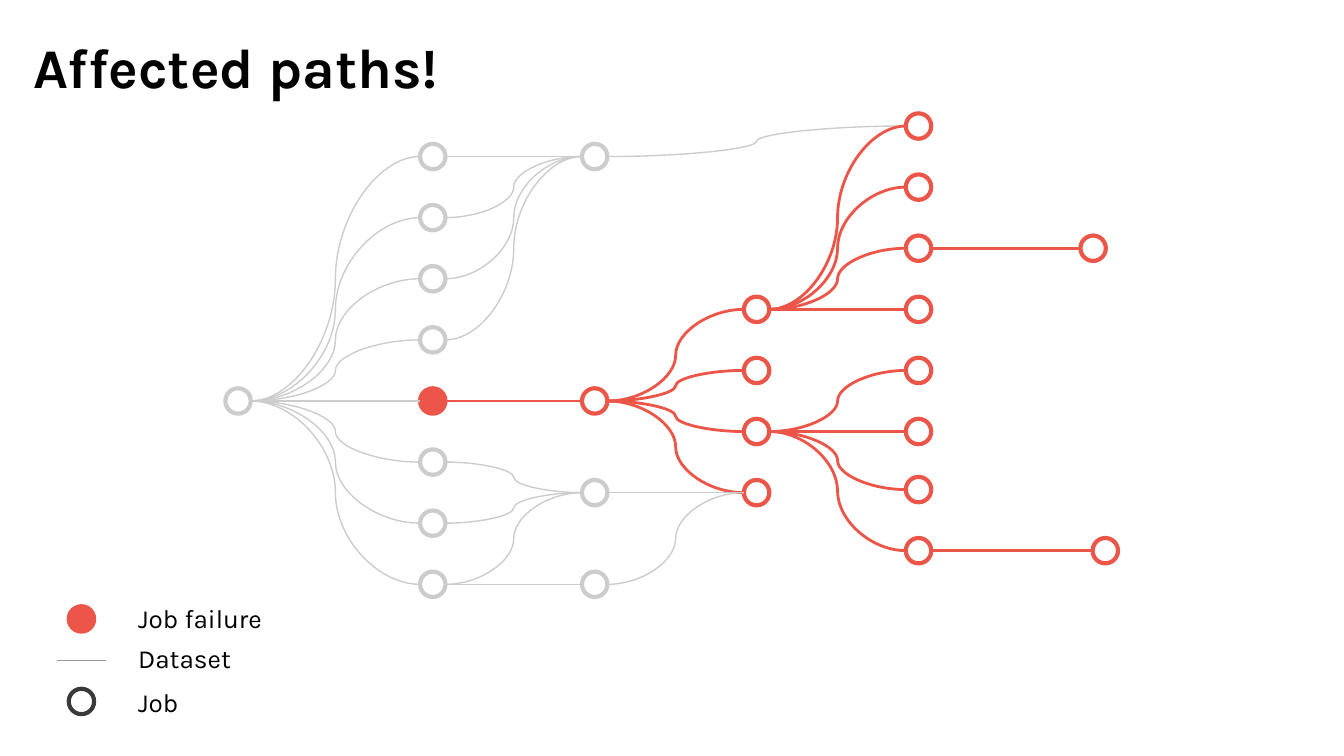
from lxml import etree
from pptx import Presentation
from pptx.dml.color import RGBColor
from pptx.enum.shapes import MSO_CONNECTOR as Connector, MSO_SHAPE as Shape
from pptx.enum.text import MSO_ANCHOR as Anchor
from pptx.oxml.ns import qn
from pptx.util import Cm, Pt

RED = RGBColor(0xEC, 0x56, 0x49)
LIGHT_GRAY = RGBColor(0xCC, 0xCC, 0xCC)
MID_GRAY = RGBColor(0x99, 0x99, 0x99)
DARK_GRAY = RGBColor(0x3A, 0x3A, 0x3A)
BLACK = RGBColor(0, 0, 0)

FONT = "Karla"
DIAMETER = 0.48
RADIUS = DIAMETER / 2
FIRST_ROW_Y, ROW_PITCH = 2.96, 1.155
STAGE_X = [4.5, 8.18, 11.24, 14.3, 17.36, 20.66, 20.89]

# Jobs: stage, rows, colour
JOBS = [
    (0, [4], LIGHT_GRAY),
    (1, [0, 1, 2, 3, 5, 6, 7], LIGHT_GRAY),
    (2, [0, 5.5, 7], LIGHT_GRAY),
    (2, [4], RED),
    (3, [2.5, 3.5, 4.5, 5.5], RED),
    (4, [-0.5, 0.5, 1.5, 2.5, 3.5, 4.5, 5.45, 6.45], RED),
    (5, [1.5], RED),
    (6, [6.45], RED),
]
FAILED_JOB = (1, 4)

# Datasets: from stage, from rows, to stage, to rows, affected
DATASETS = [
    (0, [4], 1, range(8), False),
    (1, [4], 2, [4], True),
    (1, [0, 1, 2, 3], 2, [0], False),
    (1, [5, 6, 7], 2, [5.5], False),
    (1, [7], 2, [7], False),
    (2, [4], 3, [2.5, 3.5, 4.5, 5.5], True),
    (2, [5.5, 7], 3, [5.5], False),
    (2, [0], 4, [-0.5], False),
    (3, [2.5], 4, [-0.5, 0.5, 1.5, 2.5], True),
    (3, [4.5], 4, [3.5, 4.5, 5.45, 6.45], True),
    (4, [1.5], 5, [1.5], True),
    (4, [6.45], 6, [6.45], True),
]


def row_y(row):
    return FIRST_ROW_Y + row * ROW_PITCH


def add_job(slide, x, y, color, failed=False):
    job = slide.shapes.add_shape(
        Shape.OVAL, Cm(x - RADIUS), Cm(y - RADIUS), Cm(DIAMETER), Cm(DIAMETER))
    job.shadow.inherit = False
    job.line.color.rgb = color
    job.line.width = Pt(2.25)
    if failed:
        job.fill.solid()
        job.fill.fore_color.rgb = color
    else:
        job.fill.background()


def add_dataset(slide, x1, y1, x2, y2, color, width=0.75):
    dataset = slide.shapes.add_connector(
        Connector.CURVE, Cm(x1), Cm(y1), Cm(x2), Cm(y2))
    dataset.line.color.rgb = color
    dataset.line.width = Pt(width)
    etree.SubElement(dataset._element.spPr, qn("a:effectLst"))


def add_label(slide, text, x, y, width, height, size, bold=False,
              anchor=Anchor.MIDDLE):
    frame = slide.shapes.add_textbox(
        Cm(x), Cm(y), Cm(width), Cm(height)).text_frame
    frame.word_wrap = True
    frame.vertical_anchor = anchor
    frame.margin_left = frame.margin_right = Cm(0.25)
    frame.margin_top = frame.margin_bottom = Cm(0.25)
    paragraph = frame.paragraphs[0]
    paragraph.text = text
    paragraph.font.name = FONT
    paragraph.font.size = Pt(size)
    paragraph.font.bold = bold
    paragraph.font.color.rgb = BLACK


def add_graph(slide):
    for stage, rows, color in JOBS:
        for row in rows:
            add_job(slide, STAGE_X[stage], row_y(row), color)
    failed_stage, failed_row = FAILED_JOB
    add_job(slide, STAGE_X[failed_stage], row_y(failed_row), RED, failed=True)

    for start, start_rows, end, end_rows, affected in DATASETS:
        color, width = (RED, 1.5) if affected else (LIGHT_GRAY, 0.75)
        for start_row in start_rows:
            for end_row in end_rows:
                add_dataset(slide,
                            STAGE_X[start] + RADIUS, row_y(start_row),
                            STAGE_X[end] - RADIUS, row_y(end_row),
                            color, width)


def add_legend(slide):
    symbol_x, label_x = 1.54, 2.36
    add_job(slide, symbol_x, 11.7, RED, failed=True)
    add_dataset(slide, 1.07, 12.48, 2.01, 12.48, MID_GRAY)
    add_job(slide, symbol_x, 13.26, DARK_GRAY)
    for text, y, width in [("Job failure", 11.4, 3.48),
                           ("Dataset", 12.14, 2.36),
                           ("Job", 12.98, 2.36)]:
        add_label(slide, text, label_x, y, width, 0.58, 14)


def main():
    prs = Presentation()
    prs.slide_width, prs.slide_height = Cm(25.4), Cm(14.29)
    slide = prs.slides.add_slide(prs.slide_layouts[6])

    # Title
    add_label(slide, "Affected paths!", 0.38, 0.36, 13.36, 1.7, 30,
              bold=True, anchor=Anchor.TOP)
    # Job graph
    add_graph(slide)
    # Legend
    add_legend(slide)

    prs.save("out.pptx")


if __name__ == "__main__":
    main()
